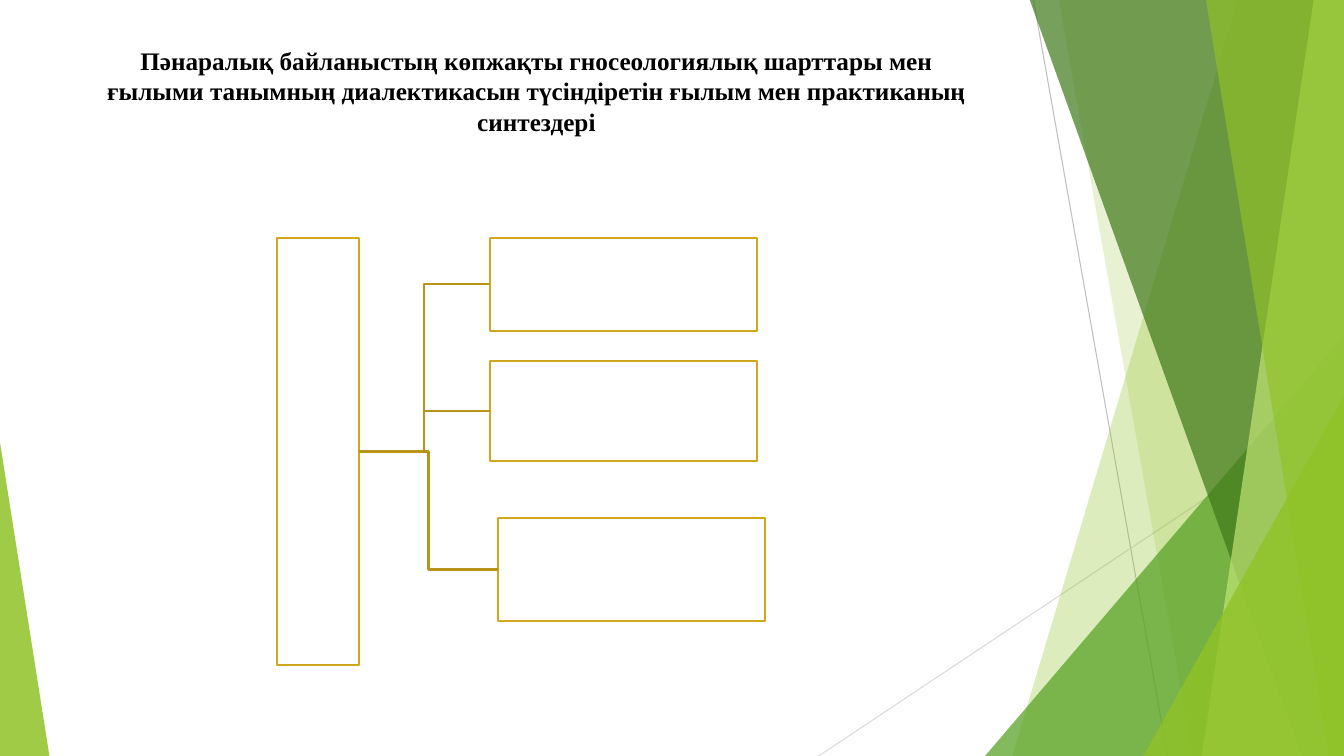
from lxml import etree
from pptx import Presentation
from pptx.dml.color import RGBColor
from pptx.enum.shapes import MSO_CONNECTOR, MSO_SHAPE
from pptx.enum.text import MSO_ANCHOR, MSO_AUTO_SIZE, PP_ALIGN
from pptx.oxml.ns import qn
from pptx.util import Inches, Pt

WIDTH, HEIGHT = 13.33, 7.5
RIGHT_SITE, LEFT_SITE = 3, 1

prs = Presentation()
prs.slide_width, prs.slide_height = Inches(WIDTH), Inches(HEIGHT)
slide = prs.slides.add_slide(prs.slide_layouts[5])
shapes = slide.shapes


def paint(shape, fill=None, opacity=100, line=None, weight=1.5):
    """Set fill, opacity in percent and outline, and take the shadow away."""
    if fill:
        shape.shadow.inherit = False
        shape.fill.solid()
        shape.fill.fore_color.rgb = RGBColor.from_string(fill)
        if opacity < 100:
            color = shape.fill._xPr.find(qn("a:solidFill"))[0]
            etree.SubElement(color, qn("a:alpha"), val=str(opacity * 1000))
    else:
        etree.SubElement(shape._element.spPr, qn("a:effectLst"))
    if line:
        shape.line.color.rgb = RGBColor.from_string(line)
        shape.line.width = Pt(weight)
    else:
        shape.line.fill.background()


def write(shape, content, font="Times New Roman", size=18, color="000000", bold=False):
    frame = shape.text_frame
    frame.word_wrap = True
    frame.auto_size = MSO_AUTO_SIZE.NONE
    frame.vertical_anchor = MSO_ANCHOR.TOP
    paragraph = frame.paragraphs[0]
    paragraph.alignment = PP_ALIGN.CENTER
    run = paragraph.add_run()
    run.text = content
    run.font.name, run.font.size, run.font.bold = font, Pt(size), bold
    run.font.color.rgb = RGBColor.from_string(color)


# Thin background lines
for x1, y1, x2, y2, color in [
    (10.25, 0, 11.58, HEIGHT, "BFBFBF"),
    (WIDTH, 4.03, 8.12, HEIGHT, "D9D9D9"),
]:
    ray = shapes.add_connector(
        MSO_CONNECTOR.STRAIGHT, Inches(x1), Inches(y1), Inches(x2), Inches(y2))
    paint(ray, line=color, weight=0.75)

# Green facets: bands run from a top x to a bottom x and reach the right edge,
# triangles are given by left, top, width and the place of their tip
for kind, geometry, color, opacity in [
    ("band", (12.28, 10.04), "90C226", 30),
    ("band", (10.5, 11.83), "90C226", 20),
    ("triangle", (9.77, 3.33, 3.56, 1), "54A021", 72),
    ("band", (10.21, 12.91), "3F7819", 70),
    ("band", (13.03, 11.92), "C0E474", 70),
    ("band", (11.96, 13.18), "90C226", 65),
    ("triangle", (11.34, 3.93, 1.99, 1), "90C226", 80),
    ("triangle", (0, 4.39, 0.49, 0), "90C226", 85),
]:
    if kind == "band":
        top_x, bottom_x = geometry
        outline = shapes.build_freeform(Inches(top_x), Inches(-0.01))
        outline.add_line_segments([
            (Inches(WIDTH), Inches(-0.01)),
            (Inches(WIDTH), Inches(HEIGHT)),
            (Inches(bottom_x), Inches(HEIGHT)),
        ], close=True)
        facet = outline.convert_to_shape()
    else:
        left, top, width, tip = geometry
        facet = shapes.add_shape(
            MSO_SHAPE.ISOSCELES_TRIANGLE,
            Inches(left), Inches(top), Inches(width), Inches(HEIGHT - top))
        facet.adjustments[0] = tip
    paint(facet, color, opacity)

title = shapes.title
title.left, title.top = Inches(0.92), Inches(0.4)
title.width, title.height = Inches(8.8), Inches(0.99)
write(title, "Пәнаралық байланыстың көпжақты гносеологиялық шарттары мен "
             "ғылыми танымның диалектикасын түсіндіретін ғылым мен практиканың "
             "синтездері", bold=True)

# Hierarchy: the root box, then its three branches
root, *branches = [
    shapes.add_shape(MSO_SHAPE.RECTANGLE, *map(Inches, box))
    for box in [
        (2.75, 2.36, 0.81, 4.24),
        (4.86, 2.36, 2.65, 0.92),
        (4.86, 3.58, 2.65, 0.99),
        (4.94, 5.14, 2.65, 1.02),
    ]
]
for box in [root, *branches]:
    paint(box, "FFFFFF", line="D1A81B")

for branch in branches:
    link = shapes.add_connector(MSO_CONNECTOR.ELBOW, 0, 0, 0, 0)
    link.begin_connect(root, RIGHT_SITE)
    link.end_connect(branch, LEFT_SITE)
    paint(link, line="B89418")

prs.save("out.pptx")
